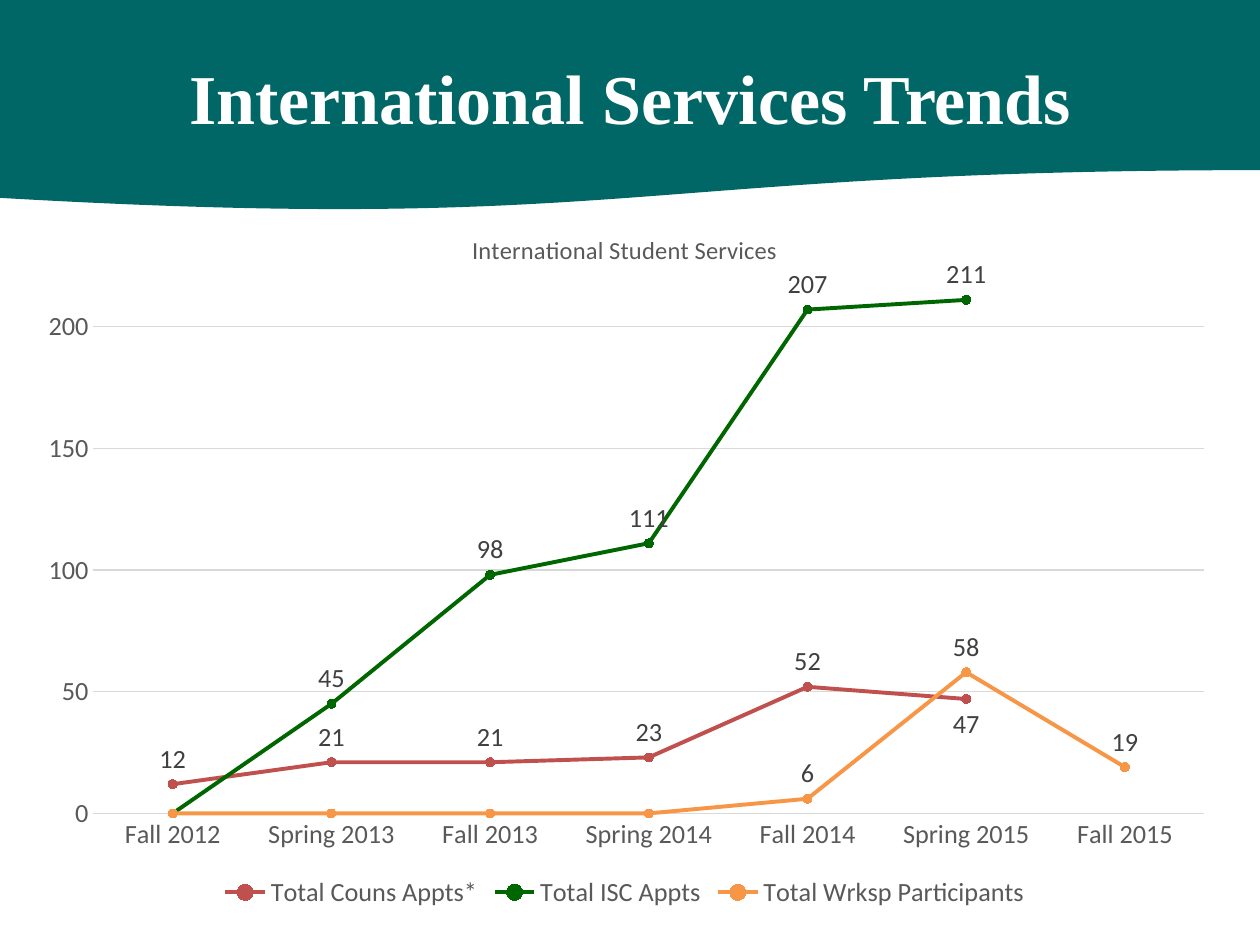
from pptx import Presentation
from pptx.chart.data import CategoryChartData
from pptx.dml.color import RGBColor
from pptx.enum.chart import XL_CHART_TYPE as ChartType, XL_LABEL_POSITION as LabelPosition
from pptx.enum.chart import XL_LEGEND_POSITION as LegendPosition, XL_MARKER_STYLE as MarkerStyle
from pptx.enum.chart import XL_TICK_MARK as TickMark
from pptx.enum.shapes import MSO_SHAPE as Shape
from pptx.enum.text import MSO_ANCHOR as Anchor, PP_ALIGN as Align
from pptx.oxml import parse_xml
from pptx.oxml.ns import nsdecls
from pptx.util import Pt

COLORS = {
    "teal": "006666", "white": "FFFFFF", "grid": "D9D9D9", "axis": "595959",
    "label": "404040", "red": "C0504D", "green": "006600", "orange": "F79646",
}
TERMS = ("Fall 2012", "Spring 2013", "Fall 2013", "Spring 2014",
         "Fall 2014", "Spring 2015", "Fall 2015")
SERVICES = (
    ("Total Couns Appts*", "red", (12, 21, 21, 23, 52, 47, None)),
    ("Total ISC Appts", "green", (0, 45, 98, 111, 207, 211, None)),
    ("Total Wrksp Participants", "orange", (0, 0, 0, 0, 6, 58, 19)),
)


class SlideBuilder:
    """Holds the style and the current slide, and adds each kind of element."""

    def __init__(self, presentation):
        self.slide = presentation.slides.add_slide(presentation.slide_layouts[5])

    def color(self, name):
        return RGBColor.from_string(COLORS[name])

    def apply(self, target, **values):
        for name, value in values.items():
            setattr(target, name, value)

    def font(self, font, size, color, family="Calibri", bold=False):
        self.apply(font, size=Pt(size), name=family, bold=bold)
        font.color.rgb = self.color(color)

    def line(self, line, color, width):
        line.color.rgb = self.color(color)
        line.width = Pt(width)

    def banner(self, left, top, width, height, color):
        shape = self.slide.shapes.add_shape(
            Shape.FLOWCHART_DOCUMENT, Pt(left), Pt(top), Pt(width), Pt(height))
        shape.shadow.inherit = False
        shape.fill.solid()
        shape.fill.fore_color.rgb = self.color(color)
        self.line(shape.line, color, 2)
        self.slide.shapes.title.element.addprevious(shape.element)

    def title(self, text, left, top, width, height):
        title = self.slide.shapes.title
        self.apply(title, left=Pt(left), top=Pt(top), width=Pt(width), height=Pt(height))
        frame = title.text_frame
        self.apply(frame, text=text, word_wrap=True, vertical_anchor=Anchor.MIDDLE,
                   margin_left=Pt(3), margin_right=Pt(3),
                   margin_top=Pt(3), margin_bottom=Pt(3))
        paragraph = frame.paragraphs[0]
        paragraph.alignment = Align.CENTER
        self.font(paragraph.runs[0].font, 40, "white", "Times New Roman", True)

    def layout(self, parent, **values):
        for old in parent.xpath("c:layout"):
            parent.remove(old)
        modes = '<c:xMode val="edge"/><c:yMode val="edge"/>'
        target = '<c:layoutTarget val="inner"/>' if "w" in values else ""
        sizes = "".join(f'<c:{name} val="{value}"/>' for name, value in values.items())
        return parse_xml(f'<c:layout {nsdecls("c")}><c:manualLayout>{target}{modes}{sizes}'
                         '</c:manualLayout></c:layout>')

    def line_chart(self, heading, categories, rows, left, top, width, height):
        data = CategoryChartData()
        data.categories = categories
        for name, _, values in rows:
            data.add_series(name, values)
        chart = self.slide.shapes.add_chart(
            ChartType.LINE_MARKERS, Pt(left), Pt(top), Pt(width), Pt(height), data).chart
        self.font(chart.font, 10, "axis")
        chart.has_title = True
        chart.chart_title.text_frame.text = heading
        self.font(chart.chart_title.text_frame.paragraphs[0].runs[0].font, 14, "axis")
        self.axes(chart)
        chart.has_legend = True
        self.apply(chart.legend, position=LegendPosition.BOTTOM, include_in_layout=False)
        self.font(chart.legend.font, 15, "axis")
        chart.plots[0].vary_by_categories = False
        for series, (_, color, _) in zip(chart.plots[0].series, rows):
            self.series(series, color)
        title_element = chart.chart_title._element
        title_layout = self.layout(title_element, x=0.37, y=0.04)
        title_element.xpath("c:tx")[0].addnext(title_layout)
        plot_area = title_element.getparent().xpath("c:plotArea")[0]
        plot_area.insert(0, self.layout(plot_area, x=0.06, y=0.11, w=0.92, h=0.75))
        return chart

    def axes(self, chart):
        for axis in (chart.category_axis, chart.value_axis):
            self.apply(axis, major_tick_mark=TickMark.NONE, minor_tick_mark=TickMark.NONE)
            self.font(axis.tick_labels.font, 15, "axis")
        self.line(chart.category_axis.format.line, "grid", 0.75)
        value_axis = chart.value_axis
        self.apply(value_axis, minimum_scale=0, maximum_scale=220, major_unit=50,
                   has_major_gridlines=True)
        value_axis.format.line.fill.background()
        self.line(value_axis.major_gridlines.format.line, "grid", 0.75)

    def series(self, series, color):
        series.smooth = False
        self.line(series.format.line, color, 2.25)
        marker = series.marker
        self.apply(marker, style=MarkerStyle.CIRCLE, size=5)
        marker.format.fill.solid()
        marker.format.fill.fore_color.rgb = self.color(color)
        self.line(marker.format.line, color, 0.75)
        labels = series.data_labels
        self.apply(labels, show_value=True, position=LabelPosition.ABOVE,
                   number_format="0;;", number_format_is_linked=False)
        self.font(labels.font, 15, "label")

    def label_below(self, series, index):
        label = series.points[index].data_label
        self.font(label.font, 15, "label")
        label.position = LabelPosition.BELOW


def main():
    presentation = Presentation()
    presentation.slide_width, presentation.slide_height = Pt(720), Pt(540)
    builder = SlideBuilder(presentation)
    builder.banner(0, 0, 720, 120, "teal")
    builder.title("International Services Trends", 36, 24, 648, 62)
    chart = builder.line_chart("International Student Services", TERMS, SERVICES,
                               12, 114, 690, 408)
    builder.label_below(chart.plots[0].series[0], TERMS.index("Spring 2015"))
    presentation.save("out.pptx")


if __name__ == "__main__":
    main()
